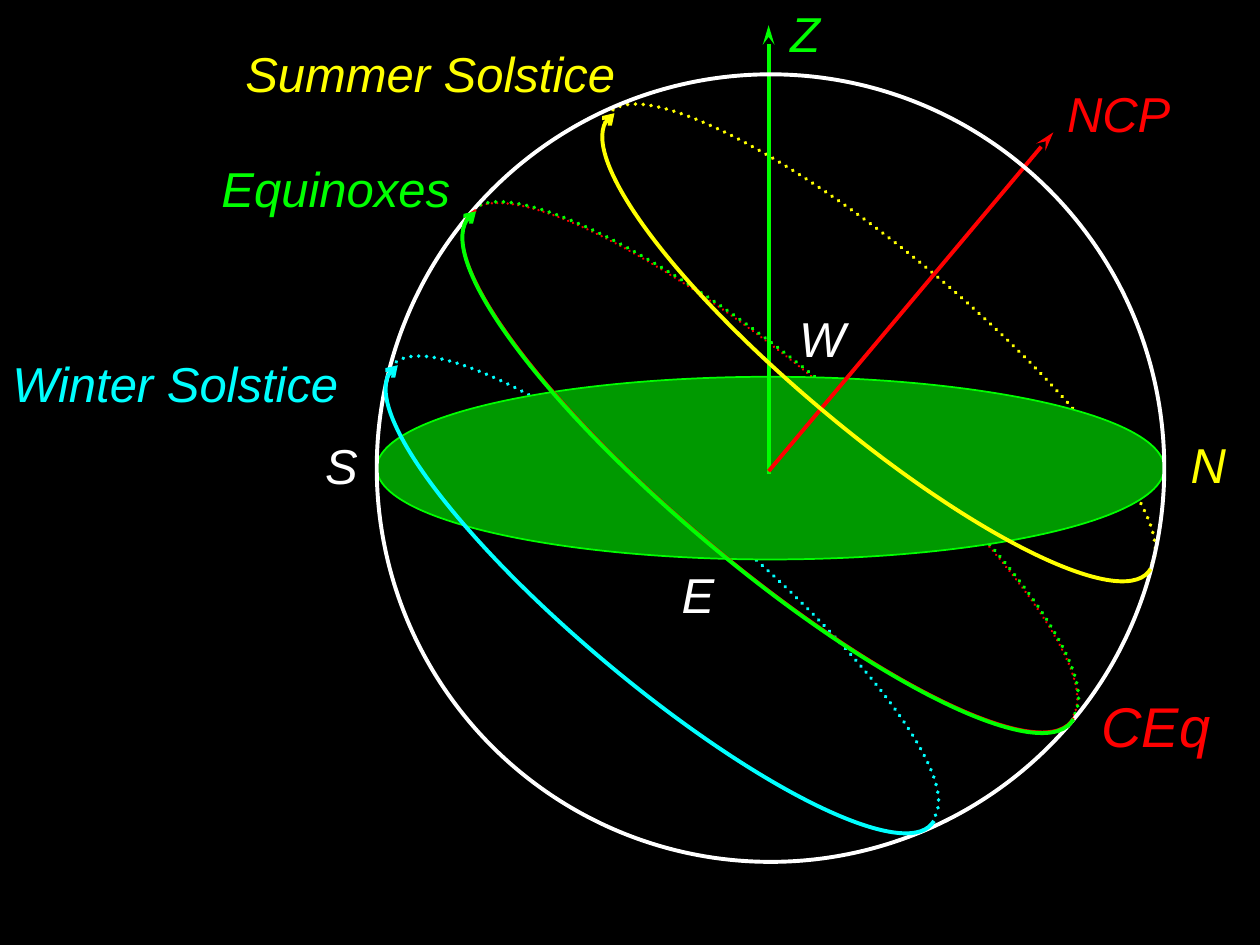
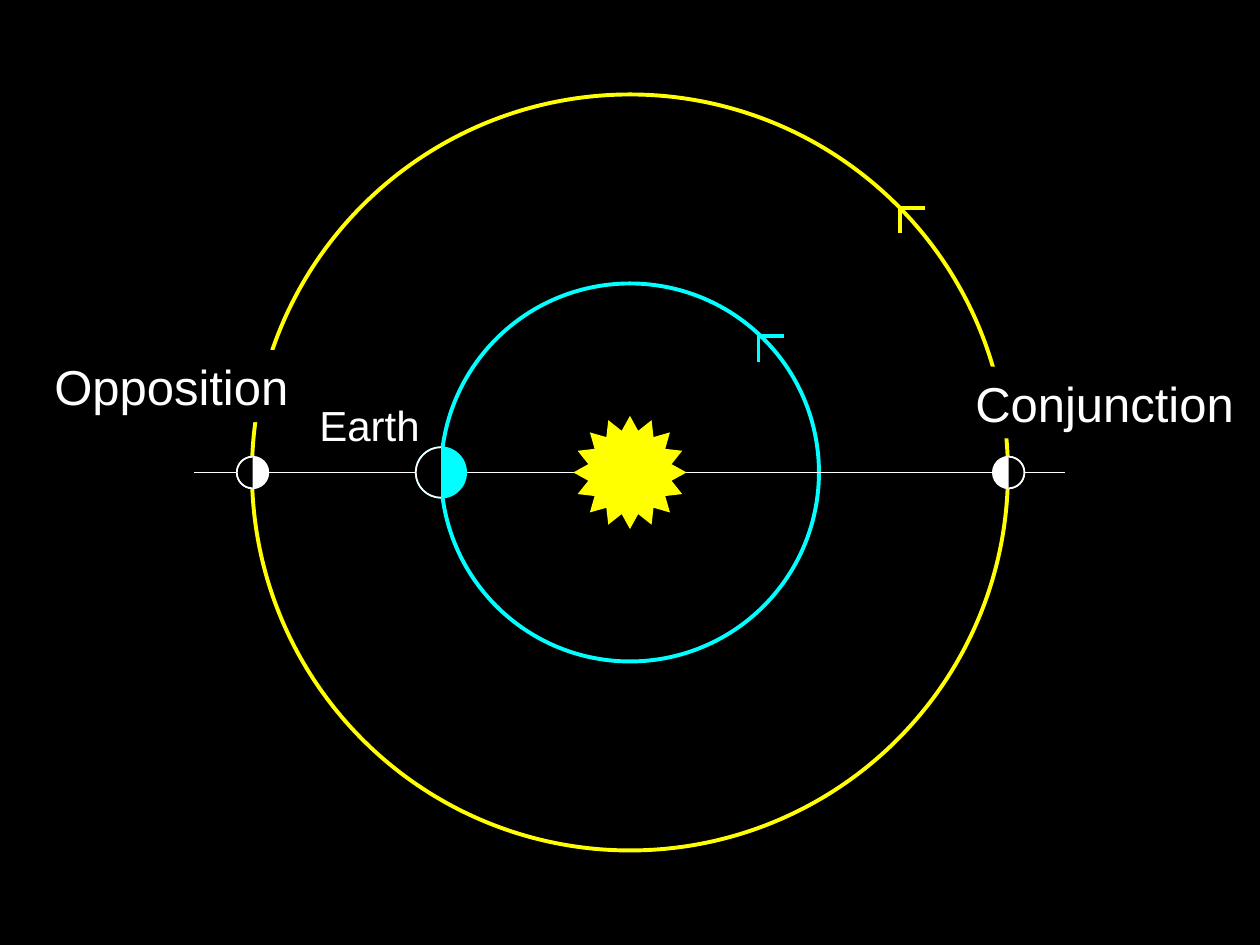
"""Build two astronomy diagrams: the Sun's daily paths on the celestial sphere, and an outer planet's orbit."""
from dataclasses import dataclass
from math import cos, radians, sin, tan

from lxml.etree import SubElement
from pptx import Presentation
from pptx.dml.color import RGBColor
from pptx.enum.dml import MSO_LINE
from pptx.enum.shapes import MSO_CONNECTOR, MSO_SHAPE as SHAPE
from pptx.enum.text import PP_ALIGN
from pptx.oxml.ns import qn
from pptx.util import Inches, Pt


@dataclass(frozen=True)
class Theme:
    font: str = "Arial"
    black: str = "000000"
    white: str = "FFFFFF"
    red: str = "FF0000"
    yellow: str = "FFFF00"
    green: str = "00FF00"
    cyan: str = "00FFFF"
    ground: str = "009900"
    small: int = 24
    normal: int = 28
    large: int = 32
    thin: float = 1
    medium: float = 1.5
    thick: float = 2.25


T = Theme()
ALIGN = {"l": PP_ALIGN.LEFT, "c": PP_ALIGN.CENTER, "r": PP_ALIGN.RIGHT}

SPHERE_CENTER, SPHERE_R, HORIZON_RY = (6.115, 3.715), 3.125, 0.725
TILT = 130
BACK, FRONT = (3, 90, 177), (174.5, 180, 270, 360, 362.5)
EQUATOR, TROPIC = (0.76, 3.12), (0.68, 2.8)
BACK_PATHS = [
    ((6.11, 3.70), EQUATOR, T.red, T.medium),
    ((6.98, 2.70), TROPIC, T.yellow, T.thick),
    ((5.26, 4.70), TROPIC, T.cyan, T.thick),
    ((6.12, 3.69), EQUATOR, T.green, T.thick),
]
FRONT_PATHS = [
    ((6.11, 3.72), EQUATOR, T.red, T.medium, None),
    ((5.25, 4.74), TROPIC, T.cyan, T.thick, "arrow"),
    ((6.11, 3.73), EQUATOR, T.green, T.thick, "arrow"),
    ((6.97, 2.74), TROPIC, T.yellow, T.thick, "arrow"),
]
Z_AXIS = (6.1, 3.76), (6.1, 0.2), T.green
POLE_AXIS = (6.1, 3.74), (8.36, 1.05), T.red
SKY_LABELS = [
    ("W", 6.24, 2.4, 0.57, "c", T.white, T.normal),
    ("E", 5.31, 4.43, 0.46, "c", T.white, T.normal),
    ("S", 2.48, 3.41, 0.46, "c", T.white, T.normal),
    ("N", 9.32, 3.4, 0.54, "c", T.yellow, T.normal),
    ("NCP", 8.37, 0.61, 1.02, "l", T.red, T.normal),
    ("CEq", 8.64, 5.44, 1.07, "c", T.red, T.large),
]
PATH_LABELS = [
    ("Summer Solstice", 1.84, 0.3, 3.14, "r", T.yellow, T.normal),
    ("Equinoxes", 1.66, 1.21, 2.04, "l", T.green, T.normal),
    ("Winter Solstice", 0, 2.76, 2.8, "l", T.cyan, T.normal),
]
ZENITH_LABEL = ("Z", 6.17, -0.02, 0.44, "c", T.green, T.normal)

SUN, SUN_R = (5, 3.75), 0.435
SIGHT_LINE = (1.54, 3.75), (8.45, 3.75)
BARB = 0.2
ORBITS = [(3, T.yellow, (7.14, 1.65)), (1.5, T.cyan, (6.02, 2.67))]
LEFT_HALF, RIGHT_HALF = (0, 90, 180), (180, 270, 360)
CONJUNCTION = (
    (8.005, 0.125, T.white, RIGHT_HALF),
    ("Conjunction", 7.39, 2.91, 2.5, "r", T.white, T.normal, True, T.black),
)
OPPOSITION = (
    (2.005, 0.125, T.white, LEFT_HALF),
    ("Opposition", 0.33, 2.78, 2.06, "c", T.white, T.normal, False, T.black),
)
EARTH = (
    (3.5, 0.2, T.cyan, LEFT_HALF),
    ("Earth", 2.43, 3.12, 1, "r", T.white, T.small),
)


def rgb(color):
    return RGBColor.from_string(color)


def paint(sp, fill, line=None, width=0):
    sp.shadow.inherit = False
    if fill:
        sp.fill.solid()
        sp.fill.fore_color.rgb = rgb(fill)
    else:
        sp.fill.background()
    if line:
        stroke(sp.line, line, width)
    else:
        sp.line.fill.background()


def stroke(ln, color, width):
    ln.color.rgb = rgb(color)
    ln.width = Pt(width)


def line_option(sp, tag, **attrs):
    SubElement(sp.line._get_or_add_ln(), qn(f"a:{tag}"), attrs)


def add_round(parent, center, rx, ry, fill, line, width, kind=SHAPE.OVAL):
    x, y = center
    sp = parent.shapes.add_shape(kind, *map(Inches, (x - rx, y - ry, 2 * rx, 2 * ry)))
    paint(sp, fill, line, width)
    return sp


def add_path(parent, points, color, width, fill=None):
    pts = [(Inches(x), Inches(y)) for x, y in points]
    fb = parent.shapes.build_freeform(*pts[0])
    fb.add_line_segments(pts[1:], close=False)
    sp = fb.convert_to_shape()
    paint(sp, fill, color, width)
    return sp


def arc_points(center, radii, stops):
    """Return the start point, then two handles and an end point for each stop."""
    (x, y), (a, b) = center, radii

    def at(t, pull=0):
        return (x - a * (sin(t) + pull * cos(t)), y - b * (cos(t) - pull * sin(t)))

    angles = [radians(s) for s in stops]
    points = [at(angles[0])]
    for t, u in zip(angles, angles[1:]):
        pull = 4 / 3 * tan((u - t) / 4)
        points += [at(t, pull), at(u, -pull), at(u)]
    return points


def add_arc(parent, center, radii, stops, color, width, fill=None, tilt=0):
    sp = add_path(parent, arc_points(center, radii, stops), color, width, fill)
    outline = next(sp._element.iter(qn("a:path")))
    segments = outline.findall(qn("a:lnTo"))
    for i in range(0, len(segments), 3):
        curve = SubElement(outline, qn("a:cubicBezTo"))
        for segment in segments[i:i + 3]:
            curve.append(segment[0])
            outline.remove(segment)
    if tilt:
        cx, cy = map(Inches, center)
        dx, dy = sp.left + sp.width / 2 - cx, sp.top + sp.height / 2 - cy
        c, s = cos(radians(tilt)), sin(radians(tilt))
        sp.left = round(cx + dx * c - dy * s - sp.width / 2)
        sp.top = round(cy + dx * s + dy * c - sp.height / 2)
        sp.rotation = tilt
    return sp


def add_line(slide, start, end, color, width):
    cn = slide.shapes.add_connector(MSO_CONNECTOR.STRAIGHT, *map(Inches, start + end))
    stroke(cn.line, color, width)
    SubElement(cn._element.spPr, qn("a:effectLst"))
    return cn


def add_axis(slide, start, end, color):
    cn = add_line(slide, start, end, color, T.thick)
    line_option(cn, "tailEnd", type="stealth", len="lg")


def add_label(slide, text, x, y, w, align, color, size, wrap=False, fill=None, italic=False):
    box = [Inches(v) for v in (x, y, w, size / 50 + 0.01)]
    if fill:
        sp = slide.shapes.add_shape(SHAPE.RECTANGLE, *box)
        paint(sp, fill)
    else:
        sp = slide.shapes.add_textbox(*box)
    tf = sp.text_frame
    tf.word_wrap = wrap
    tf.text = text
    p = tf.paragraphs[0]
    p.alignment = ALIGN[align]
    font = p.runs[0].font
    font.name, font.size, font.italic = T.font, Pt(size), italic
    font.color.rgb = rgb(color)


def add_planet(slide, x, r, color, night):
    group = slide.shapes.add_group_shape()
    center = x, SUN[1]
    add_round(group, center, r, r, color, color, T.thin)
    add_arc(group, center, (r, r), night, T.white, T.thin, T.black)


def add_slide(prs):
    slide = prs.slides.add_slide(prs.slide_layouts[6])
    slide.background.fill.solid()
    slide.background.fill.fore_color.rgb = rgb(T.black)
    return slide


def build_sphere(slide):
    for center, radii, color, width in BACK_PATHS:
        sp = add_arc(slide, center, radii, BACK, color, width, tilt=TILT)
        sp.line.dash_style = MSO_LINE.ROUND_DOT
        sp.line._get_or_add_ln().set("cap", "rnd")
    add_round(slide, SPHERE_CENTER, SPHERE_R, HORIZON_RY, T.ground, T.green, T.thin)
    add_axis(slide, *Z_AXIS)
    for label in SKY_LABELS:
        add_label(slide, *label, italic=True)
    add_axis(slide, *POLE_AXIS)
    add_round(slide, SPHERE_CENTER, SPHERE_R, SPHERE_R, None, T.white, T.thick)
    for label in PATH_LABELS:
        add_label(slide, *label, italic=True)
    for center, radii, color, width, head in FRONT_PATHS:
        sp = add_arc(slide, center, radii, FRONT, color, width, tilt=TILT)
        if head:
            line_option(sp, "headEnd", type=head)
    add_label(slide, *ZENITH_LABEL, italic=True)


def build_orbits(slide):
    for r, color, _ in ORBITS:
        add_round(slide, SUN, r, r, None, color, T.thick)
    add_line(slide, *SIGHT_LINE, T.white, T.thin)
    for _, color, (x, y) in ORBITS:
        add_path(slide, [(x + BARB, y), (x, y), (x, y + BARB)], color, T.thick)
    for planet, label in (CONJUNCTION, OPPOSITION):
        add_planet(slide, *planet)
        add_label(slide, *label)
    star = add_round(slide, SUN, SUN_R, SUN_R, T.yellow, T.yellow, T.thin, SHAPE.STAR_16_POINT)
    star.adjustments[0] = 0.375
    line_option(star, "miter", lim="800000")
    planet, label = EARTH
    add_planet(slide, *planet)
    add_label(slide, *label)


def main():
    prs = Presentation()
    prs.slide_width, prs.slide_height = Inches(10), Inches(7.5)
    for build in (build_sphere, build_orbits):
        build(add_slide(prs))
    prs.save("out.pptx")


if __name__ == "__main__":
    main()
